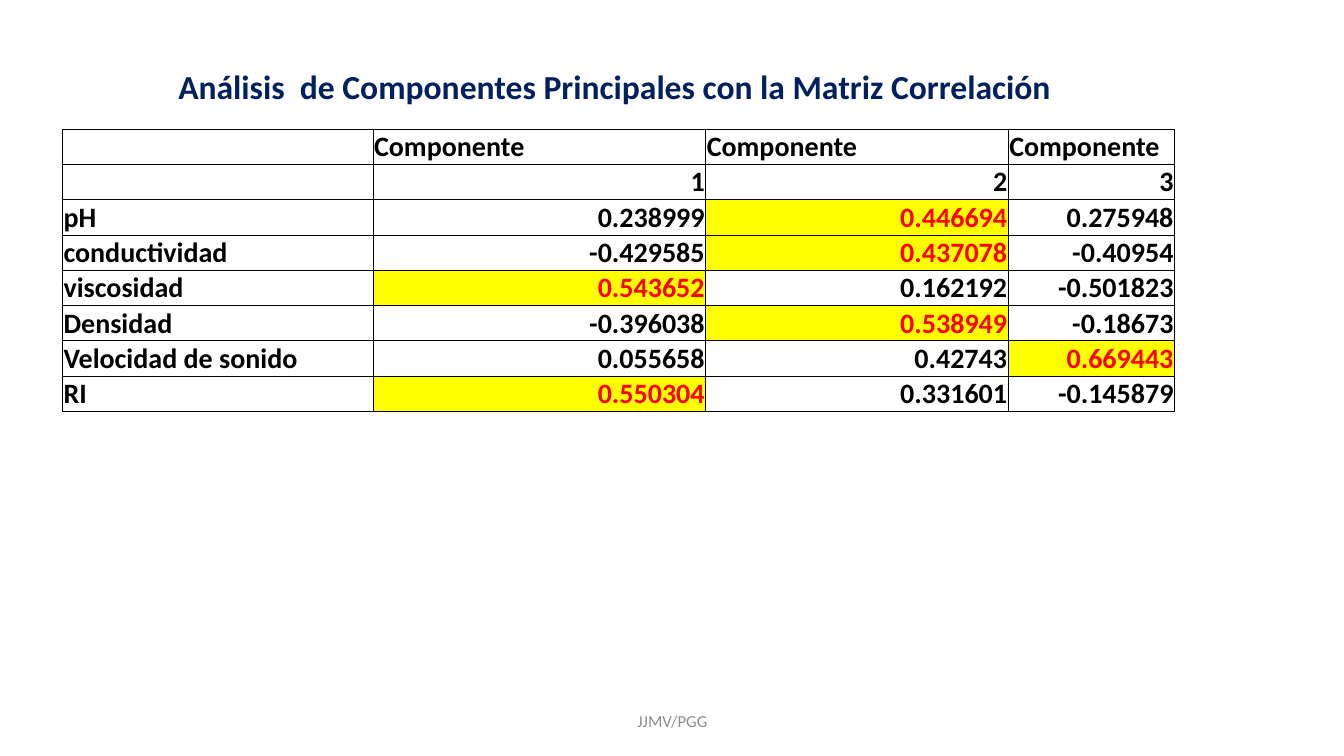
from pptx import Presentation
from pptx.dml.color import RGBColor
from pptx.enum.text import MSO_ANCHOR, PP_ALIGN
from pptx.oxml import parse_xml
from pptx.oxml.ns import nsdecls
from pptx.util import Inches, Pt

COLORS = {
    "black": "000000",
    "red": "FF0000",
    "yellow": "FFFF00",
    "navy": "002060",
    "gray": "8C8C8C",
}
HEADS = [
    ["", "Componente", "Componente", "Componente"],
    ["", "1", "2", "3"],
]
LOADS = [
    ["pH", "0.238999", "0.446694", "0.275948"],
    ["conductividad", "-0.429585", "0.437078", "-0.40954"],
    ["viscosidad", "0.543652", "0.162192", "-0.501823"],
    ["Densidad", "-0.396038", "0.538949", "-0.18673"],
    ["Velocidad de sonido", "0.055658", "0.42743", "0.669443"],
    ["RI", "0.550304", "0.331601", "-0.145879"],
]
WIDTHS = [3.08, 3.3, 3, 1.65]
HEIGHT = 0.35


def write(frame, text, size=20, color="black", bold=True, align=PP_ALIGN.LEFT):
    para = frame.paragraphs[0]
    para.alignment = align
    run = para.add_run()
    run.text = text
    run.font.name = "Calibri"
    run.font.size = Pt(size)
    run.font.bold = bold
    run.font.color.rgb = RGBColor.from_string(COLORS[color])


def add_label(slide, box, text, wrap=True, anchor=MSO_ANCHOR.TOP, **style):
    label = slide.shapes.add_textbox(*map(Inches, box))
    frame = label.text_frame
    frame.word_wrap = wrap
    frame.vertical_anchor = anchor
    write(frame, text, **style)


def add_border(cell):
    props = cell._tc.get_or_add_tcPr()
    for side in ("lnL", "lnR", "lnT", "lnB"):
        props.append(parse_xml(
            f'<a:{side} {nsdecls("a")} w="{Pt(0.5)}"><a:solidFill>'
            f'<a:srgbClr val="{COLORS["black"]}"/></a:solidFill></a:{side}>'
        ))


def fill_cell(cell, text, peak=False, align=PP_ALIGN.LEFT):
    cell.margin_left = cell.margin_right = cell.margin_top = Inches(0.01)
    cell.margin_bottom = Inches(0)
    cell.vertical_anchor = MSO_ANCHOR.BOTTOM
    add_border(cell)
    if peak:
        cell.fill.solid()
        cell.fill.fore_color.rgb = RGBColor.from_string(COLORS["yellow"])
    else:
        cell.fill.background()
    if text:
        write(cell.text_frame, text, color="red" if peak else "black", align=align)


def add_grid(slide, left, top):
    rows = HEADS + LOADS
    frame = slide.shapes.add_table(
        len(rows), len(WIDTHS), Inches(left), Inches(top),
        Inches(sum(WIDTHS)), Inches(HEIGHT * len(rows)),
    )
    table = frame.table
    table.first_row = table.horz_banding = False
    for col, width in zip(table.columns, WIDTHS):
        col.width = Inches(width)
    for r, row in enumerate(rows):
        table.rows[r].height = Inches(HEIGHT)
        top_load = max(row[1:], key=float) if row in LOADS else None
        for c, text in enumerate(row):
            left_side = r == 0 or c == 0
            align = PP_ALIGN.LEFT if left_side else PP_ALIGN.RIGHT
            fill_cell(table.cell(r, c), text, text == top_load, align)


def main():
    deck = Presentation()
    deck.slide_width = Inches(13.33)
    deck.slide_height = Inches(7.5)
    slide = deck.slides.add_slide(deck.slide_layouts[6])
    add_label(slide, (4.42, 6.95, 4.5, 0.4), "JJMV/PGG", anchor=MSO_ANCHOR.MIDDLE,
              size=12, color="gray", bold=False, align=PP_ALIGN.CENTER)
    add_grid(slide, 0.62, 1.28)
    add_label(slide, (1.67, 0.6, 8.95, 0.5),
              "Análisis  de Componentes Principales con la Matriz Correlación",
              wrap=False, size=24, color="navy")
    deck.save("out.pptx")


if __name__ == "__main__":
    main()
